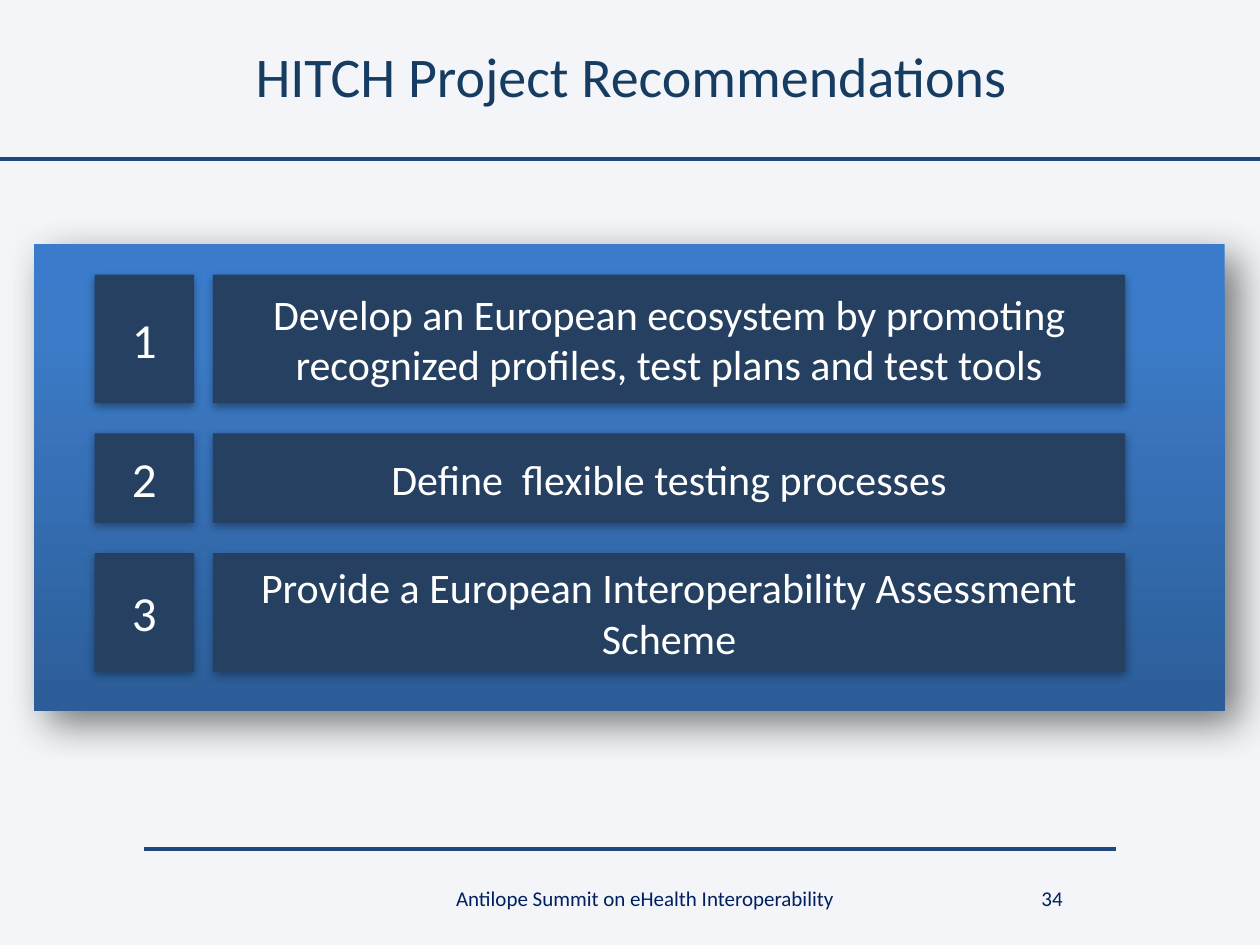
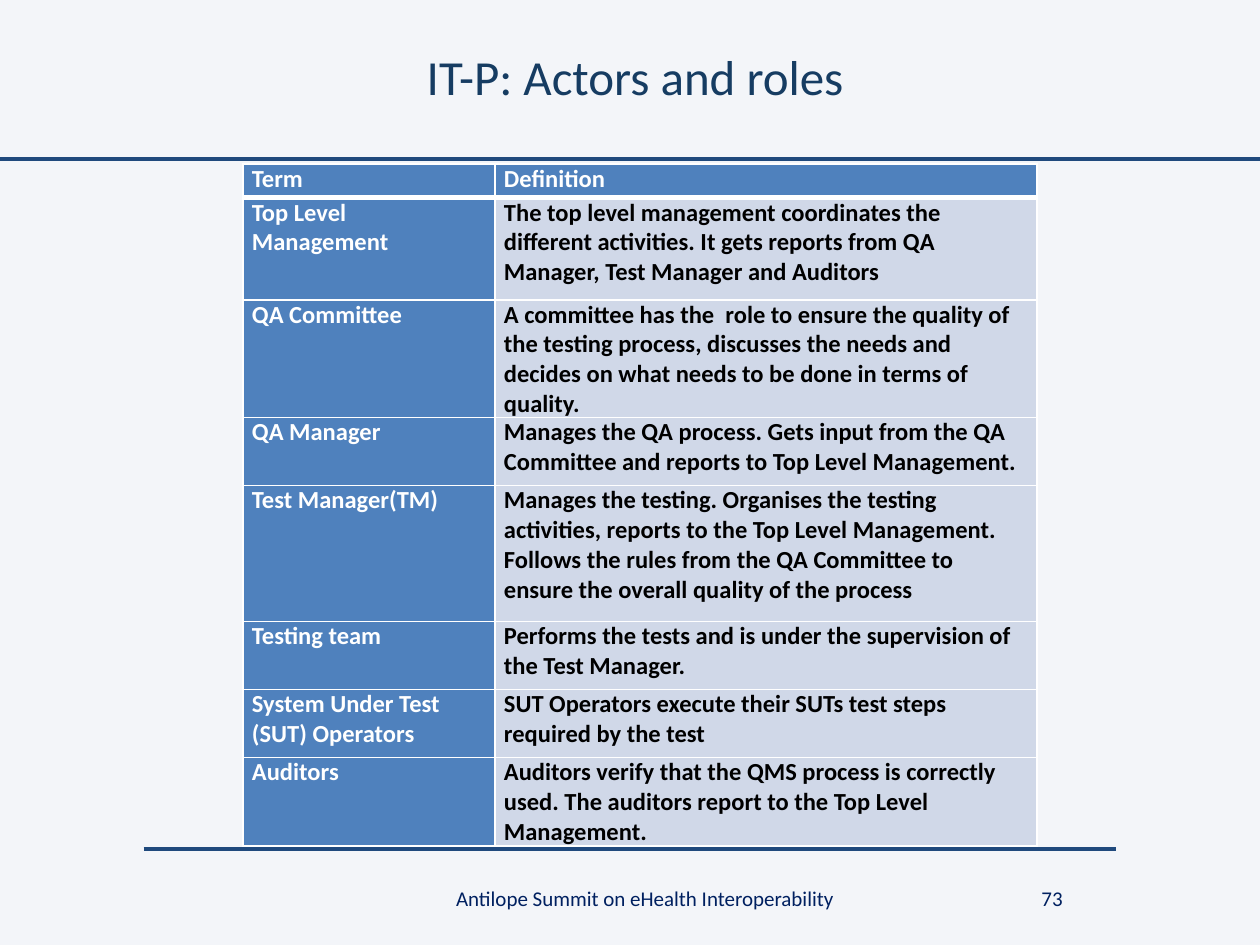
from dataclasses import dataclass
from copy import deepcopy

from lxml.etree import SubElement
from pptx import Presentation
from pptx.dml.color import RGBColor
from pptx.enum.shapes import MSO_CONNECTOR, MSO_SHAPE
from pptx.enum.text import MSO_ANCHOR, PP_ALIGN
from pptx.oxml.ns import qn
from pptx.util import Inches, Pt

# Shared look
FONT = "Calibri"
BACKGROUND, RULE, TITLE, FOOTER = "F3F5F9", "1F497D", "163C62", "002060"
TILE, TERM_FILL, DEFINITION_FILL = "254061", "4F81BD", "D0D8E8"
WHITE, BLACK = "FFFFFF", "000000"
EVENT = "Antilope Summit on eHealth Interoperability"


@dataclass(frozen=True)
class Box:
    left: float
    top: float
    width: float
    height: float

    def lengths(self) -> tuple:
        return tuple(Inches(v) for v in (self.left, self.top, self.width, self.height))


@dataclass(frozen=True)
class Shadow:
    color: str
    alpha: int
    blur: float
    distance: float
    angle: int


@dataclass(frozen=True)
class Recommendation:
    text: str
    height: float


@dataclass(frozen=True)
class Role:
    term: str
    definition: str
    height: float


PANEL_SHADOW = Shadow("333333", 65, 23, 11, 45)
TILE_SHADOW = Shadow("000000", 35, 5, 1.8, 90)
PANEL_STOPS = ((0, "3A7CCB"), (0.2, "3C7BC7"), (1, "2C5D98"))

RECOMMENDATIONS = [
    Recommendation("Develop an European ecosystem by promoting recognized profiles, "
                   "test plans and test tools", 1.02),
    Recommendation("Define  flexible testing processes", 0.71),
    Recommendation("Provide a European Interoperability Assessment Scheme", 0.94),
]

ROLES = [
    Role("Term", "Definition", 0.27),
    Role("Top Level Management",
         "The top level management coordinates the different activities. It gets reports "
         "from QA Manager, Test Manager and Auditors", 0.81),
    Role("QA Committee",
         "A committee has the  role to ensure the quality of the testing process, discusses "
         "the needs and decides on what needs to be done in terms of quality.", 0.81),
    Role("QA Manager",
         "Manages the QA process. Gets input from the QA Committee and reports to Top Level "
         "Management.", 0.54),
    Role("Test Manager(TM)",
         "Manages the testing. Organises the testing activities, reports to the Top Level "
         "Management. Follows the rules from the QA Committee to ensure the overall quality "
         "of the process", 1.08),
    Role("Testing team",
         "Performs the tests and is under the supervision of the Test Manager.", 0.54),
    Role("System Under Test (SUT) Operators",
         "SUT Operators execute their SUTs test steps required by the test", 0.54),
    Role("Auditors",
         "Auditors verify that the QMS process is correctly used. The auditors report to the "
         "Top Level Management.", 0.54),
]


def rgb(color: str) -> RGBColor:
    return RGBColor.from_string(color)


def write(frame, text: str, size: float, color: str, align=PP_ALIGN.CENTER, bold=False):
    """Put one formatted run in the first paragraph and return the paragraph."""
    frame.word_wrap = True
    paragraph = frame.paragraphs[0]
    paragraph.alignment = align
    run = paragraph.add_run()
    run.text = text
    run.font.name, run.font.size, run.font.bold = FONT, Pt(size), bold
    run.font.color.rgb = rgb(color)
    return paragraph


def add_rule(slide, left: float, right: float, y: float) -> None:
    rule = slide.shapes.add_connector(
        MSO_CONNECTOR.STRAIGHT, Inches(left), Inches(y), Inches(right), Inches(y))
    rule.line.color.rgb = rgb(RULE)
    rule.line.width = Pt(2.25)
    SubElement(rule._element.spPr, qn("a:effectLst"))


def add_label(slide, box: Box, text: str) -> None:
    label = slide.shapes.add_textbox(*box.lengths())
    write(label.text_frame, text, 12, FOOTER)


def add_framed_slide(prs, title: str, size: float, title_box: Box, number: int):
    """Start a slide with its rules, title and footer."""
    slide = prs.slides.add_slide(prs.slide_layouts[5])
    add_rule(slide, 0, 10, 1.26)
    add_rule(slide, 1.14, 8.86, 6.74)
    heading = slide.shapes.title
    heading.left, heading.top, heading.width, heading.height = title_box.lengths()
    heading.text_frame.vertical_anchor = MSO_ANCHOR.MIDDLE
    write(heading.text_frame, title, size, TITLE)
    add_label(slide, Box(2.64, 6.98, 4.96, 0.4), EVENT)
    add_label(slide, Box(7.84, 6.98, 1.02, 0.4), str(number))
    return slide


def add_block(slide, box: Box, shadow: Shadow):
    """Add a borderless rectangle with a soft shadow."""
    block = slide.shapes.add_shape(MSO_SHAPE.RECTANGLE, *box.lengths())
    block.fill.solid()
    block.fill.fore_color.rgb = rgb(TILE)
    block.line.fill.background()
    block.shadow.inherit = False
    effects = block._element.spPr.find(qn("a:effectLst"))
    outer = SubElement(effects, qn("a:outerShdw"), blurRad=str(Pt(shadow.blur)),
                       dist=str(Pt(shadow.distance)), dir=str(shadow.angle * 60000),
                       algn="ctr", rotWithShape="0")
    color = SubElement(outer, qn("a:srgbClr"), val=shadow.color)
    SubElement(color, qn("a:alpha"), val=str(shadow.alpha * 1000))
    return block


def add_panel(slide, box: Box) -> None:
    panel = add_block(slide, box, PANEL_SHADOW)
    panel.fill.gradient()
    panel.fill.gradient_angle = 270
    stop_list = panel._element.spPr.find(".//" + qn("a:gsLst"))
    stop_list.insert(1, deepcopy(stop_list[0]))
    for stop, (position, color) in zip(panel.fill.gradient_stops, PANEL_STOPS):
        stop.position = position
        stop.color.rgb = rgb(color)


def add_tile(slide, box: Box, text: str, size: float) -> None:
    tile = add_block(slide, box, TILE_SHADOW)
    tile.text_frame.vertical_anchor = MSO_ANCHOR.MIDDLE
    write(tile.text_frame, text, size, WHITE)


def set_borders(cell, top: float, bottom: float) -> None:
    properties = cell._tc.get_or_add_tcPr()
    for side, width in (("L", 1), ("R", 1), ("T", top), ("B", bottom)):
        border = SubElement(properties, qn(f"a:ln{side}"), w=str(Pt(width)))
        SubElement(SubElement(border, qn("a:solidFill")), qn("a:srgbClr"), val=WHITE)


def fill_cell(cell, text: str, row: int, is_label: bool) -> None:
    cell.margin_left = cell.margin_right = Inches(0.07)
    cell.margin_top = cell.margin_bottom = 0
    set_borders(cell, top=3 if row == 1 else 1, bottom=3 if row == 0 else 1)
    cell.fill.solid()
    cell.fill.fore_color.rgb = rgb(TERM_FILL if is_label else DEFINITION_FILL)
    paragraph = write(cell.text_frame, text, 14, WHITE if is_label else BLACK,
                      PP_ALIGN.LEFT, bold=True)
    paragraph.space_before = Pt(6)


def build_recommendations(prs) -> None:
    slide = add_framed_slide(prs, "HITCH Project Recommendations", 32,
                             Box(1.9, 0.05, 6.22, 1.1), 34)
    add_panel(slide, Box(0.27, 1.94, 9.45, 3.7))
    top, gap = 2.18, 0.24
    for number, item in enumerate(RECOMMENDATIONS, start=1):
        add_tile(slide, Box(0.75, top, 0.79, item.height), str(number), 28)
        add_tile(slide, Box(1.69, top, 7.24, item.height), item.text, 24)
        top += item.height + gap


def build_roles(prs) -> None:
    slide = add_framed_slide(prs, "IT-P: Actors and roles", 28,
                             Box(2.01, 0.05, 6.06, 1.1), 73)
    height = sum(role.height for role in ROLES)
    table = slide.shapes.add_table(
        len(ROLES), 2, *Box(1.93, 1.3, 6.3, height).lengths()).table
    table.first_row = table.horz_banding = False
    for column, width in zip(table.columns, (2, 4.3)):
        column.width = Inches(width)
    for row, role in enumerate(ROLES):
        table.rows[row].height = Inches(role.height)
        fill_cell(table.cell(row, 0), role.term, row, is_label=True)
        fill_cell(table.cell(row, 1), role.definition, row, is_label=row == 0)


def main() -> None:
    prs = Presentation()
    prs.slide_width, prs.slide_height = Inches(10), Inches(7.5)
    backdrop = prs.slide_master.background.fill
    backdrop.solid()
    backdrop.fore_color.rgb = rgb(BACKGROUND)
    build_recommendations(prs)
    build_roles(prs)
    prs.save("out.pptx")


if __name__ == "__main__":
    main()
